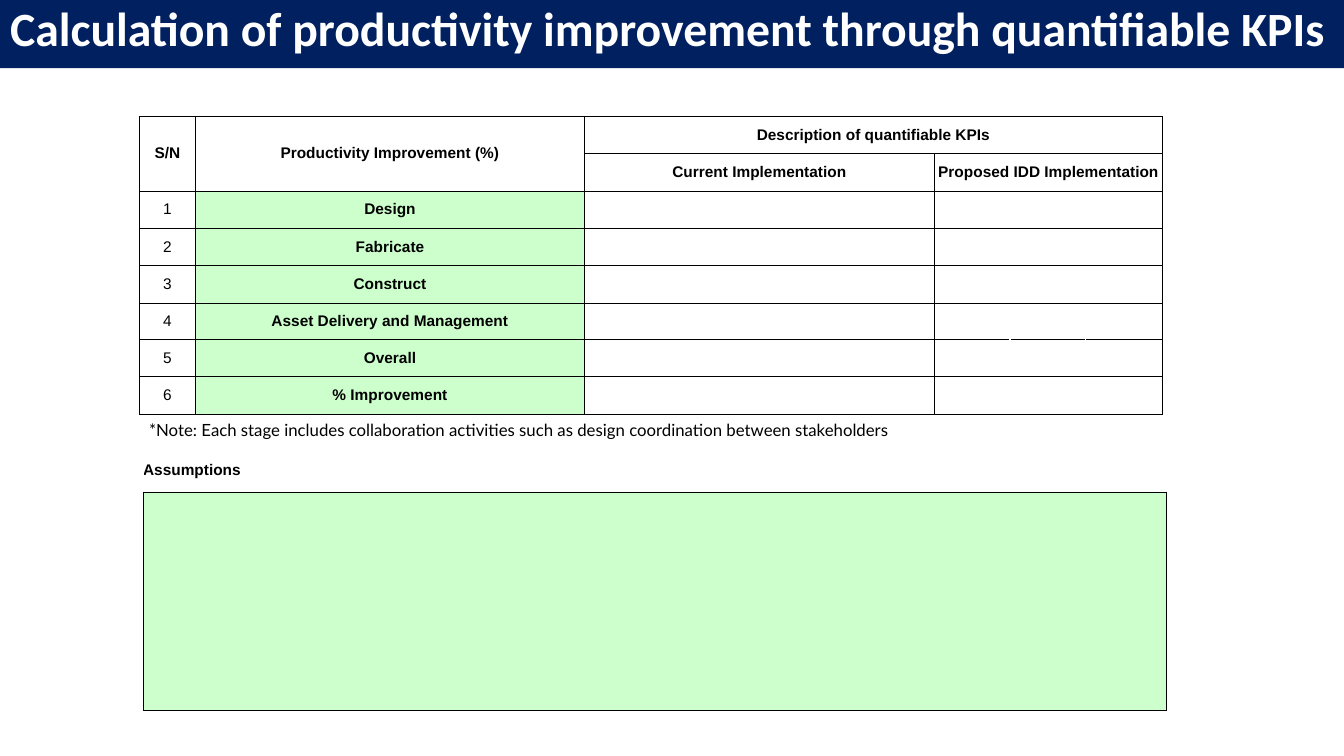
from dataclasses import dataclass
from typing import Optional

from lxml.etree import SubElement
from pptx import Presentation
from pptx.dml.color import RGBColor as Rgb
from pptx.enum.text import MSO_ANCHOR as Anchor, MSO_AUTO_SIZE as Fit, PP_ALIGN as Align
from pptx.oxml.ns import qn
from pptx.util import Pt

HUES = {"navy": "002060", "white": "FFFFFF", "black": "000000", "green": "CCFFCC"}
STAGES = ["Design", "Fabricate", "Construct", "Asset Delivery and Management",
          "Overall", "% Improvement"]


@dataclass
class Grid:
    left: float
    top: float
    cols: list[float]
    rows: list[float]


@dataclass
class Box:
    row: int
    col: int
    text: str = ""
    fill: Optional[str] = "white"
    bold: bool = True
    align: Align = Align.CENTER
    down: int = 1
    wide: int = 1
    sides: str = "LRTB"


def hue(name: str) -> Rgb:
    return Rgb.from_string(HUES[name])


def add_run(para, text: str, face: str, size: float, tint: str, bold: bool = False) -> None:
    run = para.add_run()
    run.text = text
    run.font.name, run.font.size, run.font.bold = face, Pt(size), bold
    run.font.color.rgb = hue(tint)


def add_edges(cell, sides: str) -> None:
    props = cell._tc.get_or_add_tcPr()
    for side in sides:
        line = SubElement(props, qn(f"a:ln{side}"), w=str(Pt(0.5)))
        fill = SubElement(line, qn("a:solidFill"))
        SubElement(fill, qn("a:srgbClr"), val=HUES["black"])


def draw_box(table, box: Box) -> None:
    first = table.cell(box.row, box.col)
    if box.down * box.wide > 1:
        first.merge(table.cell(box.row + box.down - 1, box.col + box.wide - 1))
    for row in range(box.row, box.row + box.down):
        for col in range(box.col, box.col + box.wide):
            cell = table.cell(row, col)
            cell.margin_left = cell.margin_right = cell.margin_top = cell.margin_bottom = 0
            cell.vertical_anchor = Anchor.MIDDLE
            add_edges(cell, box.sides)
            if box.fill:
                cell.fill.solid()
                cell.fill.fore_color.rgb = hue(box.fill)
            else:
                cell.fill.background()
    if box.text:
        para = first.text_frame.paragraphs[0]
        para.alignment = box.align
        add_run(para, box.text, "Arial", 11, "black", box.bold)


def draw_grid(slide, grid: Grid, boxes: list[Box]) -> None:
    table = slide.shapes.add_table(
        len(grid.rows), len(grid.cols), Pt(grid.left), Pt(grid.top),
        Pt(sum(grid.cols)), Pt(sum(grid.rows))).table
    table.first_row = table.horz_banding = False
    for col, width in zip(table.columns, grid.cols):
        col.width = Pt(width)
    for row, height in zip(table.rows, grid.rows):
        row.height = Pt(height)
    for box in boxes:
        draw_box(table, box)


def kpi_boxes() -> list[Box]:
    boxes = [
        Box(0, 0, "S/N", down=2),
        Box(0, 1, "Productivity Improvement (%)", down=2),
        Box(0, 2, "Description of quantifiable KPIs", wide=4),
        Box(1, 2, "Current Implementation"),
        Box(1, 3, "Proposed IDD Implementation", wide=3),
    ]
    for num, stage in enumerate(STAGES, 1):
        row = num + 1
        boxes += [Box(row, 0, str(num), bold=False),
                  Box(row, 1, stage, "green"), Box(row, 2)]
        if stage == "Overall":  # three open cells in place of a merged one
            boxes += [Box(row, col, sides=sides)
                      for col, sides in enumerate(("LTB", "TB", "RTB"), 3)]
        else:
            boxes.append(Box(row, 3, wide=3))
    return boxes


def main() -> None:
    deck = Presentation()
    deck.slide_width, deck.slide_height = Pt(960), Pt(540)
    slide = deck.slides.add_slide(deck.slide_layouts[5])

    # Title band
    title = slide.shapes.title
    title.left, title.top, title.width, title.height = Pt(0), Pt(0), Pt(960), Pt(48.7)
    title.fill.solid()
    title.fill.fore_color.rgb = hue("navy")
    frame = title.text_frame
    frame.auto_size, frame.vertical_anchor = Fit.NONE, Anchor.MIDDLE
    para = frame.paragraphs[0]
    para.alignment, para.line_spacing = Align.LEFT, 0.7
    add_run(para, "Calculation of productivity improvement through quantifiable KPIs",
            "Calibri", 34.1, "white", True)

    # KPI table
    draw_grid(slide, Grid(99.5, 83, [40.2, 277.8, 250, 54, 54, 55],
                          [26.7] * 5 + [26] + [26.7] * 2), kpi_boxes())

    # Assumptions table
    cols = [197.3, 28, 92.2, 92.2, 87, 71.3, 54, 54, 55]
    heads = [Box(0, col, "" if col else "Assumptions", None, align=Align.LEFT, sides="B")
             for col in range(len(cols))]
    draw_grid(slide, Grid(102.2, 320.4, cols, [31, 156.2]),
              heads + [Box(1, 0, fill="green", wide=len(cols))])

    # Note
    note = slide.shapes.add_textbox(Pt(99.4), Pt(296.6), Pt(736.6), Pt(21.8)).text_frame
    note.word_wrap = True
    add_run(note.paragraphs[0], "*Note: Each stage includes collaboration activities such as "
            "design coordination between stakeholders", "Lato", 12, "black")

    deck.save("out.pptx")


if __name__ == "__main__":
    main()
